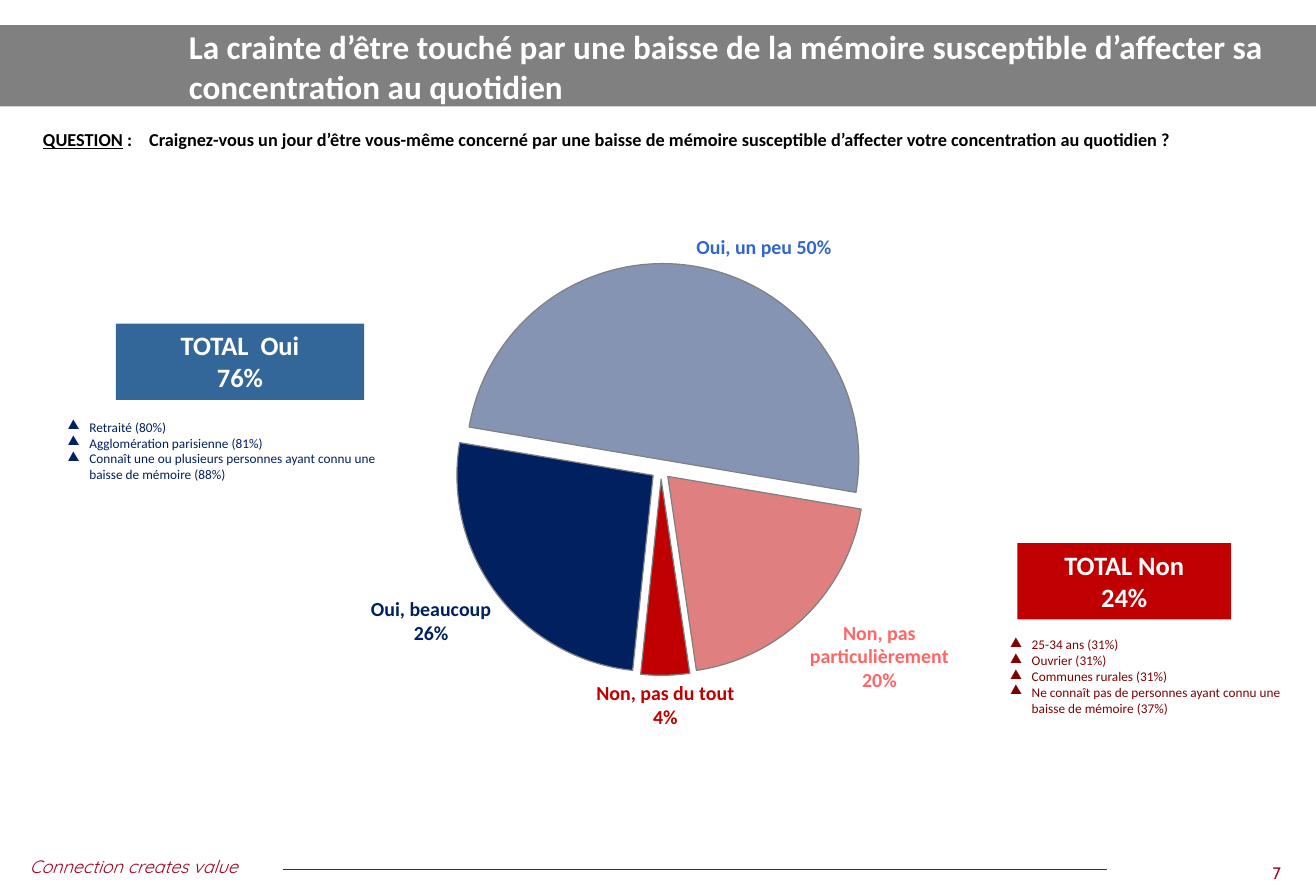
from dataclasses import dataclass

from lxml import etree
from pptx import Presentation
from pptx.chart.data import CategoryChartData
from pptx.dml.color import RGBColor
from pptx.enum.chart import XL_CHART_TYPE, XL_LABEL_POSITION
from pptx.enum.shapes import MSO_CONNECTOR, MSO_SHAPE
from pptx.enum.text import MSO_ANCHOR, MSO_AUTO_SIZE, PP_ALIGN
from pptx.oxml.ns import qn
from pptx.util import Pt

PIE = XL_CHART_TYPE.PIE
OUTSIDE = XL_LABEL_POSITION.OUTSIDE_END
STRAIGHT = MSO_CONNECTOR.STRAIGHT
RECT = MSO_SHAPE.RECTANGLE
TOP, MIDDLE = MSO_ANCHOR.TOP, MSO_ANCHOR.MIDDLE
NO_FIT = MSO_AUTO_SIZE.NONE
LEFT, CENTER, JUSTIFY = PP_ALIGN.LEFT, PP_ALIGN.CENTER, PP_ALIGN.JUSTIFY


@dataclass(frozen=True)
class Theme:
    font: str = "Calibri"
    tagline_font: str = "Quicksand"
    number_font: str = "Cabin"
    white: str = "FFFFFF"
    black: str = "000000"
    grey: str = "808080"
    crimson: str = "A50021"
    navy: str = "002060"
    blue: str = "336699"
    light_blue: str = "3366CC"
    red: str = "C00000"
    light_red: str = "FF6666"
    maroon: str = "800000"
    title: float = 20
    total: float = 16
    label: float = 12
    question: float = 11
    tagline: float = 10.8
    number: float = 10
    detail: float = 8


T = Theme()


def rgb(value):
    return RGBColor.from_string(value)


def sub(parent, tag, **attrs):
    el = etree.SubElement(parent, qn(tag))
    for name, value in attrs.items():
        el.set(name, str(value))
    return el


def style_font(font, size, color, **formats):
    formats = {"name": T.font, "size": Pt(size), **formats}
    for name, value in formats.items():
        setattr(font, name, value)
    font.color.rgb = rgb(color)


def hang(p, indent):
    pPr = p._p.get_or_add_pPr()
    pPr.set("marL", str(Pt(indent)))
    pPr.set("indent", str(-Pt(indent)))
    return pPr


class SlideBuilder:
    def __init__(self, prs, theme):
        self.theme = theme
        self.slide = prs.slides.add_slide(prs.slide_layouts[5])
        self.shapes = self.slide.shapes

    def fill_text(self, tf, lines, size, color, align=LEFT, anchor=TOP, bullet=None, **formats):
        settings = {"word_wrap": True, "auto_size": NO_FIT, "vertical_anchor": anchor}
        for name, value in settings.items():
            setattr(tf, name, value)
        for i, line in enumerate(lines):
            p = tf.add_paragraph() if i else tf.paragraphs[0]
            p.alignment = align
            if bullet:
                sub(hang(p, 13), "a:buChar", char=bullet)
            r = p.add_run()
            r.text = line
            style_font(r.font, size, color, **formats)

    def title(self, box, text):
        sp = self.shapes.title
        for name, value in zip(("left", "top", "width", "height"), box):
            setattr(sp, name, Pt(value))
        self.fill_text(sp.text_frame, [text], self.theme.title, self.theme.white,
                       anchor=MIDDLE, bold=True)
        # The title sits in front of the band
        self.shapes._spTree.append(sp._element)

    def text(self, box, lines, size, color, **options):
        sp = self.shapes.add_textbox(*map(Pt, box))
        self.fill_text(sp.text_frame, lines, size, color, **options)

    def rect(self, box, fill, lines=()):
        sp = self.shapes.add_shape(RECT, *map(Pt, box))
        sp.shadow.inherit = False
        sp.fill.solid()
        sp.fill.fore_color.rgb = rgb(fill)
        sp.line.fill.background()
        self.fill_text(sp.text_frame, lines, self.theme.total, self.theme.white,
                       align=CENTER, bold=True)

    def line(self, x1, x2, y, color):
        c = self.shapes.add_connector(STRAIGHT, Pt(x1), Pt(y), Pt(x2), Pt(y))
        c.line.color.rgb = rgb(color)
        c.line.width = Pt(0.75)
        sub(c._element.spPr, "a:effectLst")

    def question(self, box, heading, text):
        table = self.shapes.add_table(1, 1, *map(Pt, box)).table
        table.first_row = table.horz_banding = False
        cell = table.cell(0, 0)
        cell.fill.background()
        cell.vertical_anchor = MIDDLE
        p = cell.text_frame.paragraphs[0]
        p.alignment = JUSTIFY
        hang(p, 64)
        for part, underline in ((heading, True), (f" :\t{text}", False)):
            r = p.add_run()
            r.text = part
            style_font(r.font, self.theme.question, self.theme.black,
                       bold=True, underline=underline)

    def pie(self, box, answers, plot_box, start):
        """Each answer is name, value, fill, opacity in percent, label colour, separator."""
        data = CategoryChartData(number_format="0%")
        data.categories = [a[0] for a in answers]
        data.add_series("Series 1", [a[1] for a in answers])
        chart = self.shapes.add_chart(PIE, *map(Pt, box), data).chart
        chart.has_legend = chart.has_title = False
        style_font(chart.font, self.theme.label, self.theme.black, bold=True)
        plot = chart.plots[0]
        plot.vary_by_categories = True
        self.place_plot(plot._element, plot_box, start)

        series = plot.series[0]
        series.format.line.color.rgb = rgb(self.theme.grey)
        explosion = etree.Element(qn("c:explosion"), val="5")
        series._element.find(qn("c:spPr")).addnext(explosion)
        for i, (_, _, fill, opacity, color, separator) in enumerate(answers):
            point = series.points[i]
            fmt = point.format
            fmt.fill.solid()
            fmt.fill.fore_color.rgb = rgb(fill)
            if opacity < 100:
                clr = next(fmt.fill._xPr.iter(qn("a:srgbClr")))
                sub(clr, "a:alpha", val=opacity * 1000)
            fmt.line.color.rgb = rgb(self.theme.grey)
            fmt.line.width = Pt(0.75)
            label = point.data_label
            style_font(label.font, self.theme.label, color, bold=True)
            label.position = OUTSIDE
            dLbl = series._element.find(qn("c:dLbls")).findall(qn("c:dLbl"))[i]
            dLbl.find(qn("c:showCatName")).set("val", "1")
            sub(dLbl, "c:separator").text = separator

    def place_plot(self, pie, plot_box, start):
        angle = pie.find(qn("c:firstSliceAng"))
        if angle is None:
            angle = sub(pie, "c:firstSliceAng")
        angle.set("val", str(start))
        area = pie.getparent()
        for old in area.findall(qn("c:layout")):
            area.remove(old)
        layout = etree.Element(qn("c:layout"))
        area.insert(0, layout)
        manual = sub(layout, "c:manualLayout")
        sub(manual, "c:layoutTarget", val="inner")
        for tag in ("c:xMode", "c:yMode"):
            sub(manual, tag, val="edge")
        for tag, value in zip("xywh", plot_box):
            sub(manual, f"c:{tag}", val=value)


def main():
    prs = Presentation()
    prs.slide_width, prs.slide_height = Pt(793.44), Pt(538.56)
    s = SlideBuilder(prs, T)

    s.rect((0, 15.1, 793.44, 49), T.grey)
    s.text((10.8, 512.6, 225, 24.5), ["Connection creates value"], T.tagline, T.crimson,
           name=T.tagline_font, italic=True)
    s.line(170.6, 667.4, 524.2, T.crimson)
    s.text((746, 517, 47.5, 19.5), ["7"], T.number, T.crimson,
           align=CENTER, name=T.number_font)

    s.pie((170, 123.8, 496.8, 342.7), [
        ("Oui, beaucoup", 0.26, T.navy, 100, T.navy, "\n"),
        ("Oui, un peu", 0.5, T.navy, 48, T.light_blue, " "),
        ("Non, pas particulièrement", 0.2, T.red, 50, T.light_red, "\n"),
        ("Non, pas du tout", 0.04, T.red, 100, T.red, "\n"),
    ], plot_box=(0.21, 0.1, 0.5, 0.73), start=186)

    s.text((33.8, 249.1, 208.8, 46), [
        "Retraité (80%)",
        "Agglomération parisienne (81%)",
        "Connaît une ou plusieurs personnes ayant connu une baisse de mémoire (88%)",
    ], T.detail, T.navy, bullet="▲")
    s.text((602, 380.2, 187.2, 55.4), [
        "25-34 ans (31%)",
        "Ouvrier (31%)",
        "Communes rurales (31%)",
        "Ne connaît pas de personnes ayant connu une baisse de mémoire (37%)",
    ], T.detail, T.maroon, bullet="▲")
    s.rect((69.8, 195.1, 149.8, 46), T.blue, ["TOTAL  Oui", "76%"])
    s.rect((613.4, 327.6, 128.9, 46), T.red, ["TOTAL Non", "24%"])

    s.title((106.6, 15.8, 683.3, 48.2),
            "La crainte d’être touché par une baisse de la mémoire susceptible "
            "d’affecter sa concentration au quotidien")
    s.question((18.7, 74.2, 758.9, 20.2), "QUESTION",
               "Craignez-vous un jour d’être vous-même concerné par une baisse de mémoire "
               "susceptible d’affecter votre concentration au quotidien ?")
    prs.save("out.pptx")


if __name__ == "__main__":
    main()
